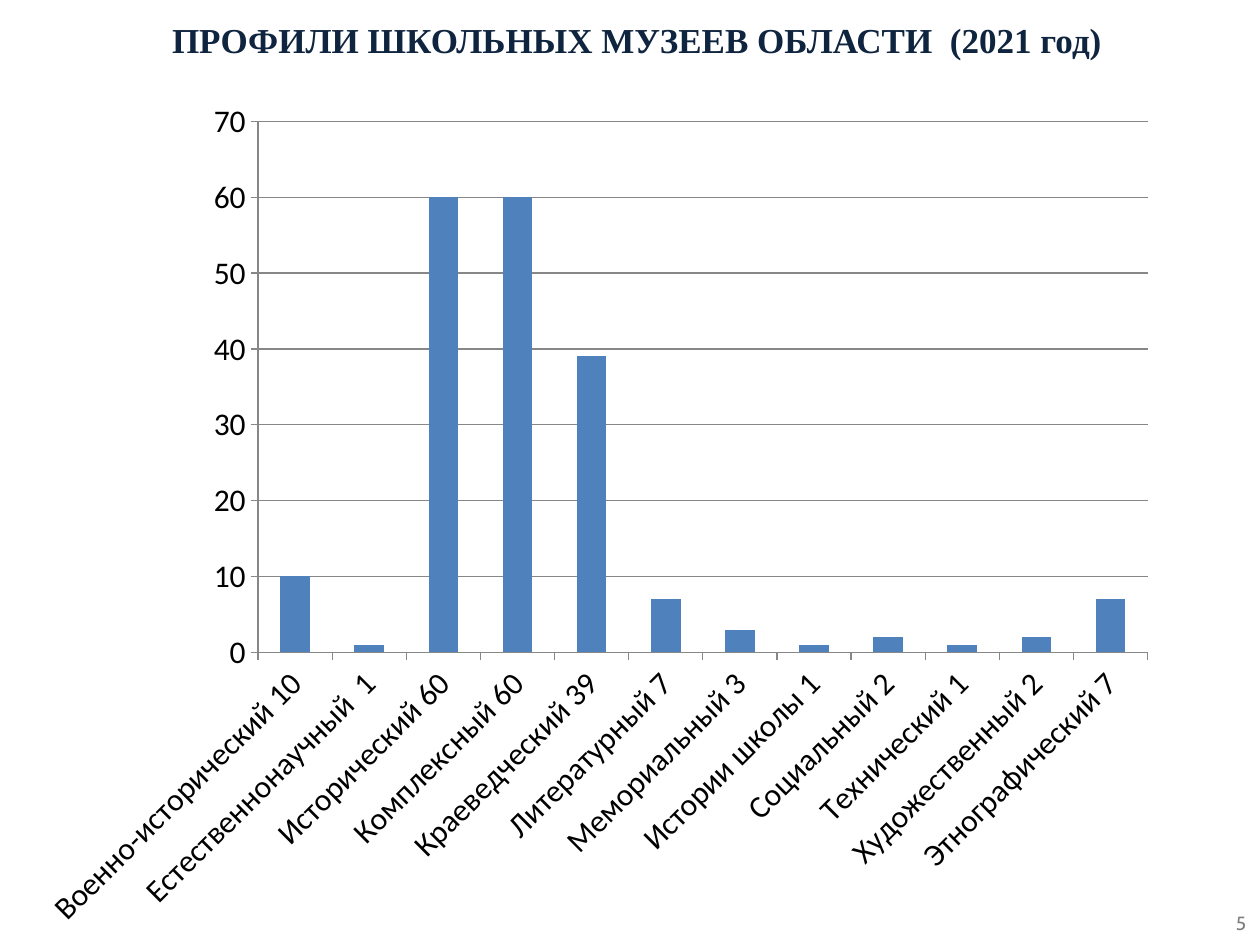
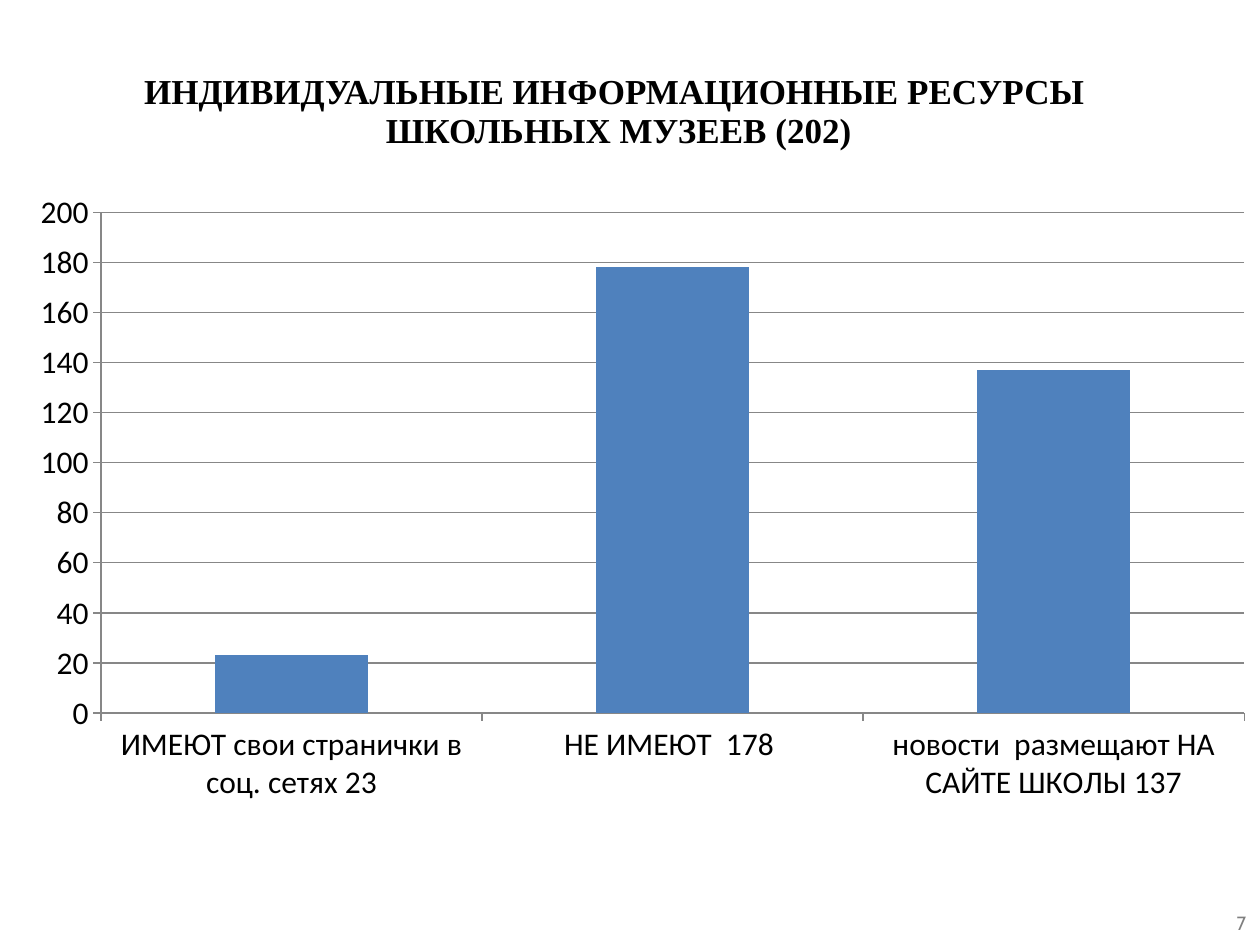
from lxml import etree
from pptx import Presentation
from pptx.chart.data import CategoryChartData
from pptx.dml.color import RGBColor
from pptx.enum.chart import XL_CHART_TYPE, XL_TICK_MARK
from pptx.enum.text import PP_ALIGN
from pptx.oxml.ns import qn
from pptx.util import Inches, Pt

COLUMNS = XL_CHART_TYPE.COLUMN_CLUSTERED
TICK_OUT, TICK_NONE = XL_TICK_MARK.OUTSIDE, XL_TICK_MARK.NONE
CENTER, RIGHT = PP_ALIGN.CENTER, PP_ALIGN.RIGHT

TITLE_FONT, CHART_FONT, NUMBER_FONT = "Times New Roman", "Calibri", "Cabin"
NAVY, BLACK, GREY = "0F243E", "000000", "7F7F7F"
BAR_BLUE, AXIS_GREY = "4F81BD", "878787"

PROFILES = [
    ("Военно-исторический 10", 10),
    ("Естественнонаучный  1", 1),
    ("Исторический 60", 60),
    ("Комплексный 60", 60),
    ("Краеведческий 39", 39),
    ("Литературный 7", 7),
    ("Мемориальный 3", 3),
    ("Истории школы 1", 1),
    ("Социальный 2", 2),
    ("Технический 1", 1),
    ("Художественный 2", 2),
    ("Этнографический 7", 7),
]
RESOURCES = [
    ("ИМЕЮТ свои странички в соц. сетях 23", 23),
    ("НЕ ИМЕЮТ  178 ", 178),
    ("новости  размещают НА САЙТЕ ШКОЛЫ 137", 137),
]


def rgb(color):
    """Turn a hex string into a colour."""
    return RGBColor.from_string(color)


def style_font(font, name, size, color, bold=False):
    """Set the typeface, size, colour and weight of a font."""
    font.name, font.size, font.bold = name, Pt(size), bold
    font.color.rgb = rgb(color)


def add_text_box(page, box):
    """Add a wrapping text box and return its frame."""
    frame = page.shapes.add_textbox(*map(Inches, box)).text_frame
    frame.word_wrap = True
    return frame


def add_title(page, box, lines, color):
    """Add the bold centred heading, one paragraph per line."""
    frame = add_text_box(page, box)
    for index, line in enumerate(lines):
        para = frame.add_paragraph() if index else frame.paragraphs[0]
        para.alignment, para.line_spacing = CENTER, 0.93
        span = para.add_run()
        span.text = line
        style_font(span.font, TITLE_FONT, 20, color, bold=True)


def add_page_number(page, number):
    """Add the page number in the bottom right corner."""
    frame = add_text_box(page, (9.37, 7.19, 0.61, 0.27))
    frame.margin_left = frame.margin_right = Inches(0.09)
    frame.margin_top = frame.margin_bottom = Inches(0.04)
    para = frame.paragraphs[0]
    para.alignment, para.space_before = RIGHT, Pt(8.2)
    span = para.add_run()
    span.text = str(number)
    style_font(span.font, NUMBER_FONT, 10.9, GREY)


def place_plot(chart, area):
    """Fix the inner plot area as fractions of the chart."""
    plot_area = chart._chartSpace.chart.plotArea
    for old in plot_area.findall(qn("c:layout")):
        plot_area.remove(old)
    layout = etree.Element(qn("c:layout"))
    manual = etree.SubElement(layout, qn("c:manualLayout"))
    settings = [("layoutTarget", "inner"), ("xMode", "edge"), ("yMode", "edge")]
    for tag, value in settings + list(zip("xywh", area)):
        etree.SubElement(manual, qn(f"c:{tag}")).set("val", str(value))
    plot_area.insert(0, layout)


def add_column_chart(page, box, rows, area, top, step, angle):
    """Add a single-series column chart with horizontal gridlines."""
    data = CategoryChartData()
    data.categories = [label for label, _ in rows]
    data.add_series("Series 1", [value for _, value in rows])
    chart = page.shapes.add_chart(COLUMNS, *map(Inches, box), data).chart
    chart.has_legend = chart.has_title = False
    style_font(chart.font, CHART_FONT, 18, BLACK)
    place_plot(chart, area)

    plot = chart.plots[0]
    plot.gap_width, plot.vary_by_categories = 150, False
    fill = plot.series[0].format.fill
    fill.solid()
    fill.fore_color.rgb = rgb(BAR_BLUE)

    labels, values = chart.category_axis, chart.value_axis
    values.minimum_scale, values.maximum_scale = 0, top
    values.major_unit = step
    values.has_major_gridlines = True
    for axis in (labels, values):
        axis.major_tick_mark, axis.minor_tick_mark = TICK_OUT, TICK_NONE
        style_font(axis.tick_labels.font, CHART_FONT, 18, BLACK)
    for part in (labels, values, values.major_gridlines):
        part.format.line.color.rgb = rgb(AXIS_GREY)
        part.format.line.width = Pt(0.75)
    body = labels._element.find(qn("c:txPr")).find(qn("a:bodyPr"))
    body.set("rot", str(angle * 60000))


def add_chart_page(deck, number, title, chart):
    """Add one slide made of a page number, a title and a chart."""
    page = deck.slides.add_slide(deck.slide_layouts[6])
    add_page_number(page, number)
    add_title(page, **title)
    add_column_chart(page, **chart)


def main():
    """Build both slides and save the deck."""
    deck = Presentation()
    deck.slide_width, deck.slide_height = Inches(10), Inches(7.5)
    add_chart_page(
        deck, 5,
        title=dict(
            box=(0.91, 0.13, 8.29, 0.58), color=NAVY,
            lines=["ПРОФИЛИ ШКОЛЬНЫХ МУЗЕЕВ ОБЛАСТИ  (2021 год)"],
        ),
        chart=dict(
            box=(0.19, 0.67, 9.11, 6.83), rows=PROFILES,
            area=(0.204, 0.043, 0.775, 0.617), top=70, step=10, angle=-45,
        ),
    )
    add_chart_page(
        deck, 7,
        title=dict(
            box=(0.12, 0.53, 9.58, 0.9), color=BLACK,
            lines=["ИНДИВИДУАЛЬНЫЕ ИНФОРМАЦИОННЫЕ РЕСУРСЫ ", "ШКОЛЬНЫХ МУЗЕЕВ (202)"],
        ),
        chart=dict(
            box=(0.17, 1.53, 9.71, 5.53), rows=RESOURCES,
            area=(0.065, 0.028, 0.935, 0.719), top=200, step=20, angle=0,
        ),
    )
    deck.save("out.pptx")


if __name__ == "__main__":
    main()
